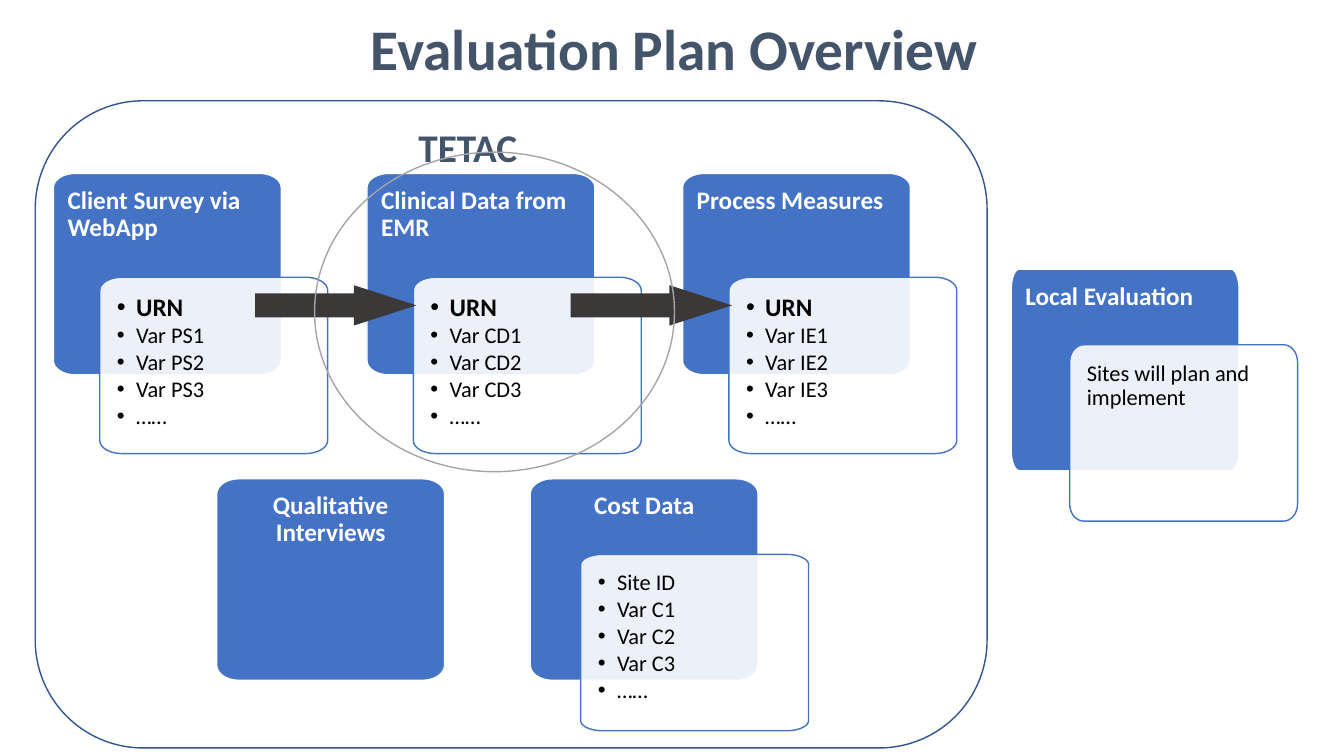
from math import cos, pi, sin

from lxml.etree import SubElement
from pptx import Presentation
from pptx.dml.color import RGBColor
from pptx.enum.shapes import MSO_SHAPE
from pptx.enum.text import MSO_ANCHOR, PP_ALIGN
from pptx.oxml.ns import qn
from pptx.util import Inches, Pt

BLUE, WHITE, BLACK, SLATE = "4472C4", "FFFFFF", "000000", "44546A"
STEPS = 8


def color(code):
    return RGBColor.from_string(code)


def bullet(para):
    props = para._p.get_or_add_pPr()
    props.set("marL", str(Inches(0.19)))
    props.set("indent", str(-Inches(0.19)))
    SubElement(props, qn("a:buFont")).set("typeface", "Arial")
    SubElement(props, qn("a:buChar")).set("char", "•")


class Board:
    """Holds the slide and the style shared by its elements."""

    font = "Calibri"

    def __init__(self, slide):
        self.shapes = slide.shapes

    def label(self, frame, text, size=18, ink=WHITE, bold=False, center=False,
              dots=False, lead=None, after=0, inset=None, top=None):
        """Fill a frame, one paragraph a line; top is the first line's size, in bold."""
        frame.word_wrap = True
        frame.vertical_anchor = MSO_ANCHOR.TOP
        if inset is not None:
            frame.margin_left = frame.margin_right = Inches(inset)
            frame.margin_top = frame.margin_bottom = Inches(inset)
        for i, line in enumerate(text.split("\n")):
            para = frame.add_paragraph() if i else frame.paragraphs[0]
            para.alignment = PP_ALIGN.CENTER if center else PP_ALIGN.LEFT
            para.space_after = Pt(after)
            if lead:
                para.line_spacing = lead
            if dots:
                bullet(para)
            first = top is not None and i == 0
            run = para.add_run()
            run.text = line
            run.font.name = self.font
            run.font.size = Pt(top if first else size)
            run.font.bold = bold or first
            run.font.color.rgb = color(ink)

    def paint(self, shape, fill=None, line=None, alpha=None):
        shape.shadow.inherit = False
        if fill:
            shape.fill.solid()
            shape.fill.fore_color.rgb = color(fill)
        else:
            shape.fill.background()
        if alpha:
            tint = shape._element.spPr.find(qn("a:solidFill"))[0]
            SubElement(tint, qn("a:alpha")).set("val", str(alpha * 1000))
        if line:
            shape.line.color.rgb = color(line)
            shape.line.width = Pt(1)
        else:
            shape.line.fill.background()
        return shape

    def shape(self, kind, x, y, w, h, **look):
        box = (Inches(n) for n in (x, y, w, h))
        return self.paint(self.shapes.add_shape(kind, *box), **look)

    def round(self, x, y, w, h, rx, ry, **look):
        """Draw a box whose corners are quarter ellipses of radii rx and ry."""
        hubs = ((x + w - rx, y + h - ry), (x + rx, y + h - ry),
                (x + rx, y + ry), (x + w - rx, y + ry))
        dots = []
        for turn, (cx, cy) in enumerate(hubs):
            for step in range(STEPS + 1):
                ang = (turn + step / STEPS) * pi / 2
                dots.append((Inches(cx + rx * cos(ang)), Inches(cy + ry * sin(ang))))
        form = self.shapes.build_freeform(*dots[0])
        form.add_line_segments(dots[1:], close=True)
        return self.paint(form.convert_to_shape(), **look)

    def card(self, x, y, text, rx=0.22, ry=0.14, center=False):
        box = self.round(x, y, 2.26, 2, rx, ry, fill=BLUE, line=WHITE)
        self.label(box.text_frame, text, bold=True, center=center, lead=0.9, inset=0.14)

    def panel(self, x, y, text, rx=0.22, ry=0.13, **form):
        box = self.round(x, y, 2.26, 1.75, rx, ry, fill=WHITE, line=BLUE, alpha=90)
        self.label(box.text_frame, text, size=16, ink=BLACK, lead=0.9,
                   after=2, inset=0.17, **form)

    def arrow(self, x, y):
        shape = self.shape(MSO_SHAPE.RIGHT_ARROW, x, y, 1.6, 0.4, fill="3B3838")
        shape.adjustments[0] = 0.6
        shape.adjustments[1] = 1.55

    def title(self, x, y, w, h, text, size):
        box = self.shapes.add_textbox(*(Inches(n) for n in (x, y, w, h)))
        self.label(box.text_frame, text, size=size, ink=SLATE, bold=True, center=True)


def fields(head, code):
    return "\n".join([head, *(f"Var {code}{n}" for n in (1, 2, 3)), "……"])


def main():
    deck = Presentation()
    deck.slide_width, deck.slide_height = Inches(13.33), Inches(7.5)
    board = Board(deck.slides.add_slide(deck.slide_layouts[6]))

    sources = ((0.53, "Client Survey via WebApp", "PS"),
               (3.64, "Clinical Data from EMR", "CD"),
               (6.77, "Process Measures", "IE"))
    for i, (x, name, code) in enumerate(sources):
        board.card(x, 1.72, name)
        board.panel(x + 0.46, 2.75, fields("URN", code), dots=True, top=18)
        if i:
            board.arrow(x - 1.11, 2.83)

    board.card(2.15, 4.75, "Qualitative Interviews", ry=0.15, center=True)
    board.card(5.26, 4.75, "Cost Data", ry=0.15, center=True)
    board.panel(5.76, 5.5, fields("Site ID", "C"), ry=0.1, dots=True)

    board.card(10.03, 2.67, "Local Evaluation", rx=0.08, ry=0.2)
    board.panel(10.61, 3.42, "Sites will plan and implement", rx=0.14, ry=0.17)

    board.shape(MSO_SHAPE.ROUNDED_RECTANGLE, 0.35, 1, 9.44, 6.42, line="325491")
    board.title(0.93, 0.08, 11.52, 0.67, "Evaluation Plan Overview", 41)
    board.title(3.39, 1.17, 2.5, 0.58, "TETAC", 28)
    board.shape(MSO_SHAPE.OVAL, 3.12, 1.51, 3.57, 3.17, line="A5A5A5")
    deck.save("out.pptx")


if __name__ == "__main__":
    main()
